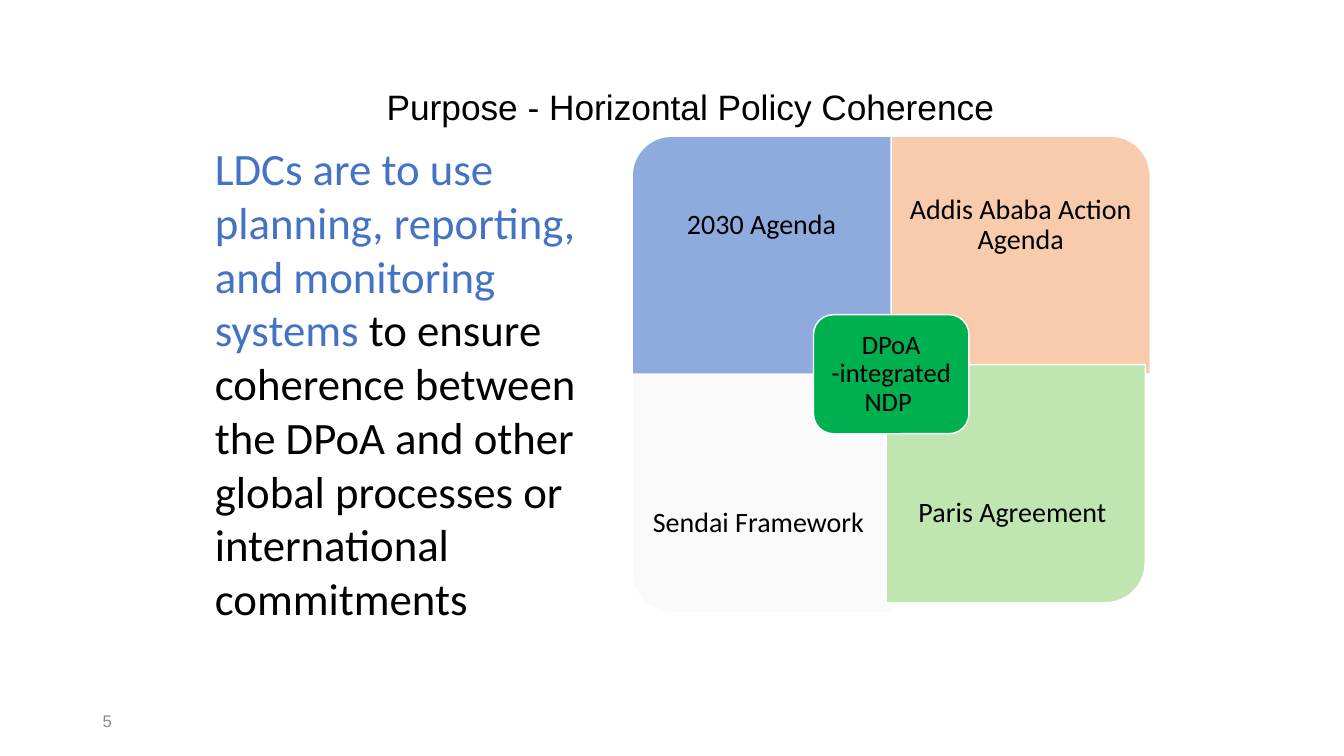
from lxml.etree import SubElement as Sub
from pptx import Presentation
from pptx.dml.color import RGBColor
from pptx.enum.shapes import MSO_SHAPE as Form
from pptx.enum.text import MSO_ANCHOR as Anchor, MSO_AUTO_SIZE as Fit, PP_ALIGN as Align
from pptx.oxml.ns import qn
from pptx.util import Cm, Pt

BLACK = RGBColor(0, 0, 0)
WHITE = RGBColor(255, 255, 255)
GREY = RGBColor(0x88, 0x88, 0x88)
ACCENT = RGBColor(0x44, 0x72, 0xC4)
BLUE = RGBColor(0x8F, 0xAA, 0xDC)
PEACH = RGBColor(0xF8, 0xCB, 0xAD)
PALE = RGBColor(0xFA, 0xFA, 0xFA)
LIME = RGBColor(0xBF, 0xE6, 0xB0)
GREEN = RGBColor(0, 0xB0, 0x50)

QUADS = [
    ("2030 Agenda", BLUE, 270, 0, 0),
    ("Addis Ababa Action Agenda", PEACH, 0, 0, 0),
    ("Sendai Framework ", PALE, 180, 0, 0),
    ("Paris Agreement ", LIME, 90, -0.13, -0.24),
]


def assign(item, values):
    """Set each named attribute of the item."""
    for name, value in values.items():
        setattr(item, name, value)


def place(item, box):
    """Move the item to a box given in centimetres."""
    names = ("left", "top", "width", "height")
    assign(item, dict(zip(names, map(Cm, box))))


def write(item, runs, size, font="Calibri", align=Align.CENTER,
          anchor=Anchor.MIDDLE, inset=None, space=0.9):
    """Write one paragraph of (text, colour) runs into the item."""
    frame = item.text_frame
    assign(frame, {"word_wrap": True, "auto_size": Fit.NONE,
                   "vertical_anchor": anchor})
    if inset is not None:
        sides = ("left", "top", "right", "bottom")
        assign(frame, {f"margin_{side}": Cm(inset) for side in sides})
    para = frame.paragraphs[0]
    assign(para, {"alignment": align, "line_spacing": space,
                  "space_before": Pt(0)})
    for text, color in runs:
        run = para.add_run()
        run.text = text
        assign(run.font, {"name": font, "size": Pt(size)})
        run.font.color.rgb = color
    return para


def block(slide, form, box, fill):
    """Add a filled shape with a thin white outline."""
    shape = slide.shapes.add_shape(form, *map(Cm, box))
    shape.shadow.inherit = False
    shape.fill.solid()
    shape.fill.fore_color.rgb = fill
    shape.line.color.rgb = WHITE
    shape.line.width = Pt(1)
    return shape


def heading(slide, box):
    """Fill the title placeholder."""
    title = slide.shapes.title
    place(title, box)
    write(title, [("Purpose - Horizontal Policy Coherence", BLACK)], 25.2, "Arial")


def message(slide, box):
    """Fill the body placeholder with the unbulleted message."""
    body = slide.placeholders[1]
    place(body, box)
    runs = [
        ("LDCs are to use planning, reporting, and monitoring systems ", ACCENT),
        ("to ensure coherence between the DPoA and other global processes "
         "or international commitments", BLACK),
    ]
    para = write(body, runs, 32, align=Align.LEFT, anchor=Anchor.TOP, space=1.0)
    props = para._p.get_or_add_pPr()
    props.set("marL", "0")
    props.set("indent", "0")
    Sub(props, qn("a:buNone"))


def matrix(slide, box):
    """Draw four rounded quadrants around a central block."""
    left, top, width, height = box
    wide, high = width / 2, height / 2
    for index, (text, fill, angle, dx, dy) in enumerate(QUADS):
        row, col = divmod(index, 2)
        x, y = left + col * wide + dx, top + row * high + dy
        w, h = (high, wide) if angle % 180 else (wide, high)
        spot = (x + (wide - w) / 2, y + (high - h) / 2, w, h)
        block(slide, Form.ROUND_1_RECTANGLE, spot, fill).rotation = angle
        area = (x, y + row * high / 4, wide, high * 3 / 4)
        label = slide.shapes.add_textbox(*map(Cm, area))
        write(label, [(text, BLACK)], 20, inset=0.4)
    w, h = wide * 0.6, high / 2
    spot = (left + wide - w / 2, top + high - h / 2, w, h)
    core = block(slide, Form.ROUNDED_RECTANGLE, spot, GREEN)
    write(core, [("DPoA -integrated NDP ", BLACK)], 19, inset=0.2)


def footer(slide, box):
    """Add the page number."""
    number = slide.shapes.add_textbox(*map(Cm, box))
    write(number, [("5", GREY)], 12, "Arial", Align.LEFT, space=1.0)


def main():
    """Build and save the slide."""
    deck = Presentation()
    assign(deck, {"slide_width": Cm(33.87), "slide_height": Cm(19.05)})
    slide = deck.slides.add_slide(deck.slide_layouts[1])
    heading(slide, (3.6, 1.8, 27.6, 1.88))
    matrix(slide, (15.93, 3.43, 13.06, 12))
    footer(slide, (2.34, 17.65, 7.62, 1.02))
    message(slide, (5.16, 3.42, 10.26, 12.57))
    deck.save("out.pptx")


if __name__ == "__main__":
    main()
